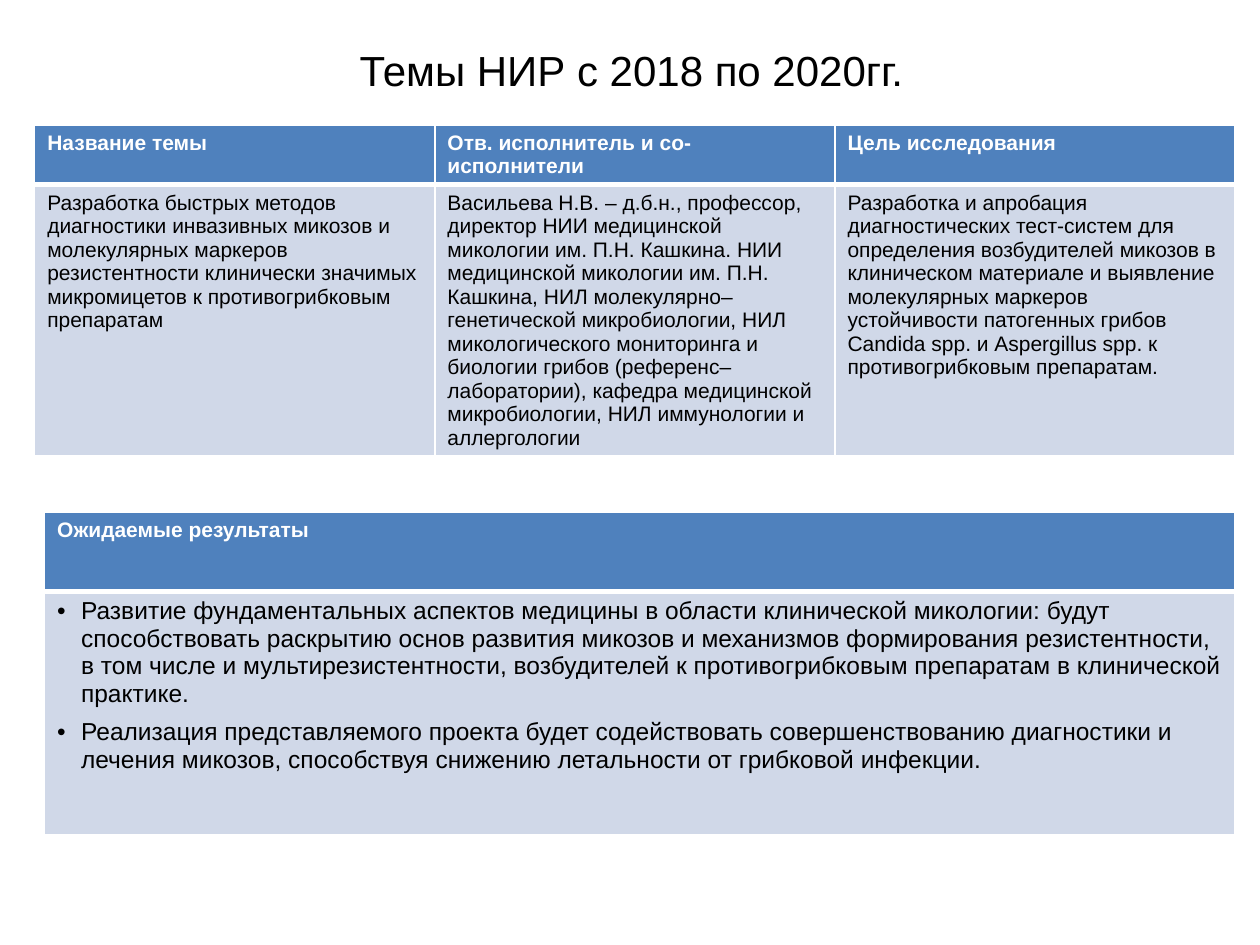
from lxml import etree
from pptx import Presentation
from pptx.dml.color import RGBColor
from pptx.enum import text
from pptx.oxml import ns
from pptx.util import Cm, Pt

FONT = "Arial"
WHITE = RGBColor(0xFF, 0xFF, 0xFF)
BLACK = RGBColor(0, 0, 0)
HEADER_BLUE = RGBColor(0x4F, 0x81, 0xBD)
BODY_BLUE = RGBColor(0xD0, 0xD8, 0xE8)

TITLE = "Темы НИР с 2018 по 2020гг."
TOPICS = {
    "Название темы": [
        "Разработка быстрых методов диагностики инвазивных микозов и "
        "молекулярных маркеров резистентности клинически значимых "
        "микромицетов к противогрибковым препаратам"
    ],
    "Отв. исполнитель и со- исполнители": [
        "Васильева Н.В. – д.б.н., профессор, директор НИИ медицинской "
        "микологии им. П.Н. Кашкина. НИИ медицинской микологии им. "
        "П.Н. Кашкина, НИЛ молекулярно– генетической микробиологии, НИЛ "
        "микологического мониторинга и биологии грибов (референс– "
        "лаборатории), кафедра медицинской микробиологии, НИЛ иммунологии "
        "и аллергологии"
    ],
    "Цель исследования": [
        "Разработка и апробация диагностических тест-систем для определения "
        "возбудителей микозов в клиническом материале и выявление "
        "молекулярных маркеров устойчивости патогенных грибов Candida spp. "
        "и Aspergillus spp. к противогрибковым препаратам."
    ],
}
RESULTS = {
    "Ожидаемые результаты": [
        "Развитие фундаментальных аспектов медицины в области клинической "
        "микологии: будут способствовать раскрытию основ развития микозов и "
        "механизмов формирования резистентности, в том числе и "
        "мультирезистентности, возбудителей к противогрибковым препаратам в "
        "клинической практике.",
        "Реализация представляемого проекта будет содействовать "
        "совершенствованию диагностики и лечения микозов, способствуя "
        "снижению летальности от грибковой инфекции.",
    ],
}


def format_font(font, size, color, bold=False):
    font.name = FONT
    font.size = Pt(size)
    font.bold = bold
    font.color.rgb = color


def add_title(slide):
    title = slide.shapes.title
    title.left, title.top, title.width, title.height = Cm(1.3), Cm(0.33), Cm(22.86), Cm(2.16)
    frame = title.text_frame
    frame.text = TITLE
    frame.vertical_anchor = text.MSO_ANCHOR.MIDDLE
    paragraph = frame.paragraphs[0]
    paragraph.alignment = text.PP_ALIGN.CENTER
    format_font(paragraph.runs[0].font, 24, BLACK)


def set_borders(cell, top, bottom):
    """Draw white borders; the side lines are 1 pt wide."""
    properties = cell._tc.get_or_add_tcPr()
    widths = {"a:lnL": 1, "a:lnR": 1, "a:lnT": top, "a:lnB": bottom}
    for index, (tag, width) in enumerate(widths.items()):
        line = etree.Element(ns.qn(tag), w=str(Pt(width)))
        fill = etree.SubElement(line, ns.qn("a:solidFill"))
        etree.SubElement(fill, ns.qn("a:srgbClr"), val=str(WHITE))
        properties.insert(index, line)


def add_bullet(paragraph):
    paragraph.space_before = Pt(6)
    properties = paragraph._p.get_or_add_pPr()
    indent = Cm(0.48)
    properties.set("marL", str(indent))
    properties.set("indent", str(-indent))
    etree.SubElement(properties, ns.qn("a:buFont"), typeface=FONT)
    etree.SubElement(properties, ns.qn("a:buChar"), char="•")


def fill_cell(cell, lines, size, is_header, bulleted=False):
    cell.fill.solid()
    cell.fill.fore_color.rgb = HEADER_BLUE if is_header else BODY_BLUE
    set_borders(cell, *((1, 3) if is_header else (3, 1)))
    cell.text_frame.text = "\n".join(lines)
    for paragraph in cell.text_frame.paragraphs:
        if bulleted:
            add_bullet(paragraph)
        format_font(paragraph.runs[0].font, size, WHITE if is_header else BLACK, is_header)


def add_topic_table(slide, columns, left, top, width, row_heights, body_size, bulleted=False):
    """Add a table with one header row and one body row from {heading: lines}."""
    frame = slide.shapes.add_table(2, len(columns), left, top, width, sum(row_heights))
    table = frame.table
    for row, height in zip(table.rows, row_heights):
        row.height = height
    for index, (heading, lines) in enumerate(columns.items()):
        fill_cell(table.cell(0, index), [heading], 12, True)
        fill_cell(table.cell(1, index), lines, body_size, False, bulleted)


def main():
    presentation = Presentation()
    presentation.slide_width, presentation.slide_height = Cm(25.4), Cm(19.05)
    slide = presentation.slides.add_slide(presentation.slide_layouts[5])
    add_title(slide)
    add_topic_table(slide, TOPICS, Cm(0.7), Cm(2.52), Cm(24.2),
                    (Cm(1.2), Cm(5.45)), 12)
    add_topic_table(slide, RESULTS, Cm(0.9), Cm(10.32), Cm(24),
                    (Cm(1.6), Cm(4.9)), 14, bulleted=True)
    presentation.save("out.pptx")


if __name__ == "__main__":
    main()
